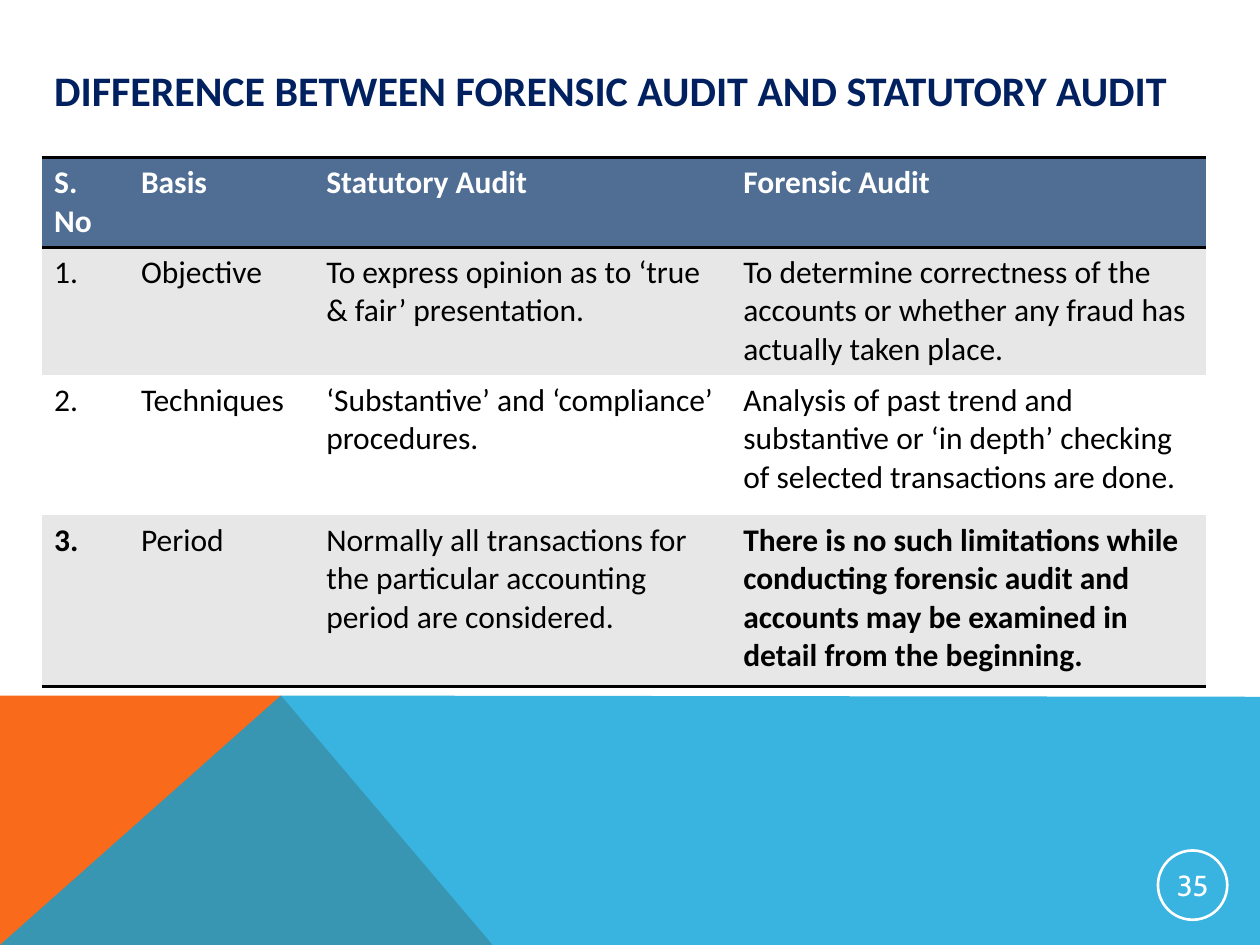
from dataclasses import dataclass

from lxml.etree import SubElement
from pptx import Presentation
from pptx.dml.color import RGBColor
from pptx.enum.shapes import MSO_SHAPE as Shape
from pptx.enum.text import MSO_ANCHOR as Anchor, PP_ALIGN as Align
from pptx.oxml import parse_xml
from pptx.oxml.ns import nsdecls, qn
from pptx.util import Inches, Pt

BLACK, WHITE, NAVY = "000000", "FFFFFF", "002060"
HEADER_FILL, BAND_FILL = "506E94", "E7E7E7"
NO_STYLE_NO_GRID = "{2D5ABB26-0587-4C30-8999-92F81FD0307C}"
COLUMN_WIDTHS = (0.69, 1.47, 3.31, 3.77)


@dataclass(frozen=True)
class Row:
    texts: tuple[str, ...]
    height: float
    fill: str
    color: str = BLACK
    bold_columns: tuple[int, ...] = ()
    borders: tuple[str, ...] = ()


@dataclass(frozen=True)
class Wedge:
    points: tuple[tuple[float, float], ...]
    fill: str
    opacity: int = 100


ROWS = (
    Row(("S. No", "Basis", "Statutory Audit", "Forensic Audit"),
        0.6, HEADER_FILL, WHITE, (0, 1, 2, 3), ("lnT", "lnB")),
    Row(("1.", "Objective", "To express opinion as to ‘true & fair’ presentation.",
         "To determine correctness of the accounts or whether any fraud has "
         "actually taken place."),
        0.85, BAND_FILL),
    Row(("2.", "Techniques", "‘Substantive’ and ‘compliance’ procedures.",
         "Analysis of past trend and substantive or ‘in depth’ checking of "
         "selected transactions are done."),
        1.11, WHITE),
    Row(("3.", "Period",
         "Normally all transactions for the particular accounting period are considered.",
         "There is no such limitations while conducting forensic audit and accounts "
         "may be examined in detail from the beginning."),
        1.36, BAND_FILL, bold_columns=(0, 3), borders=("lnB",)),
)

WEDGES = (
    Wedge(((0, 7.5), (0, 5.52), (2.23, 5.52), (3.91, 7.5)), "F96A1B"),
    Wedge(((0, 7.5), (2.23, 5.52), (10, 5.53), (10, 7.5)), "08A1D9", 80),
)


def rgb(value: str) -> RGBColor:
    return RGBColor.from_string(value)


def add_span(para, text: str, size: float, color: str,
             bold: bool = False, font: str = "Calibri") -> None:
    span = para.add_run()
    span.text = text
    span.font.name = font
    span.font.size = Pt(size)
    span.font.bold = bold
    span.font.color.rgb = rgb(color)


def add_wedge(page, wedge: Wedge) -> None:
    points = [(Inches(x), Inches(y)) for x, y in wedge.points]
    builder = page.shapes.build_freeform(*points[0])
    builder.add_line_segments(points[1:], close=True)
    shape = builder.convert_to_shape()
    shape.shadow.inherit = False
    shape.fill.solid()
    shape.fill.fore_color.rgb = rgb(wedge.fill)
    shape.line.fill.background()
    if wedge.opacity < 100:
        color = shape.fill._xPr.find(qn("a:solidFill"))[0]
        SubElement(color, qn("a:alpha"), val=str(wedge.opacity * 1000))


def add_borders(cell, sides: tuple[str, ...]) -> None:
    """Draw 2 pt black rules, placed before the fill as the schema requires."""
    properties = cell._tc.get_or_add_tcPr()
    for index, side in enumerate(sides):
        properties.insert(index, parse_xml(
            f'<a:{side} {nsdecls("a")} w="{Pt(2)}"><a:solidFill>'
            f'<a:srgbClr val="{BLACK}"/></a:solidFill></a:{side}>'))


def add_comparison(page) -> None:
    height = sum(row.height for row in ROWS)
    table = page.shapes.add_table(
        len(ROWS), len(COLUMN_WIDTHS), Inches(0.33), Inches(1.25),
        Inches(sum(COLUMN_WIDTHS)), Inches(height)).table
    table.horz_banding = False
    table._tbl.tblPr.find(qn("a:tableStyleId")).text = NO_STYLE_NO_GRID
    for column, width in zip(table.columns, COLUMN_WIDTHS):
        column.width = Inches(width)
    for table_row, row in zip(table.rows, ROWS):
        table_row.height = Inches(row.height)
        for index, (cell, text) in enumerate(zip(table_row.cells, row.texts)):
            cell.fill.solid()
            cell.fill.fore_color.rgb = rgb(row.fill)
            add_borders(cell, row.borders)
            add_span(cell.text_frame.paragraphs[0], text, 18, row.color,
                     index in row.bold_columns)


def add_title(page, text: str) -> None:
    title = page.shapes.title
    title.left, title.top = Inches(0.33), Inches(0.17)
    title.width, title.height = Inches(9.25), Inches(1.08)
    title.text_frame.vertical_anchor = Anchor.MIDDLE
    para = title.text_frame.paragraphs[0]
    para.alignment = Align.LEFT
    add_span(para, text, 24, NAVY, bold=True)


def add_page_number(page, number: str) -> None:
    badge = page.shapes.add_shape(
        Shape.OVAL, Inches(9.19), Inches(6.75), Inches(0.55), Inches(0.55))
    badge.shadow.inherit = False
    badge.fill.background()
    badge.line.color.rgb = rgb(WHITE)
    badge.line.width = Pt(1.5)
    frame = badge.text_frame
    frame.margin_left = frame.margin_right = Inches(0.01)
    frame.margin_top = frame.margin_bottom = Inches(0.01)
    frame.vertical_anchor = Anchor.MIDDLE
    para = frame.paragraphs[0]
    para.alignment = Align.CENTER
    add_span(para, number, 16.5, WHITE, font="Cabin")


def main() -> None:
    deck = Presentation()
    deck.slide_width, deck.slide_height = Inches(10), Inches(7.5)
    page = deck.slides.add_slide(deck.slide_layouts[5])
    for wedge in WEDGES:
        add_wedge(page, wedge)
    add_title(page, "DIFFERENCE BETWEEN FORENSIC AUDIT AND STATUTORY AUDIT")
    add_comparison(page)
    add_page_number(page, "35")
    deck.save("out.pptx")


if __name__ == "__main__":
    main()
